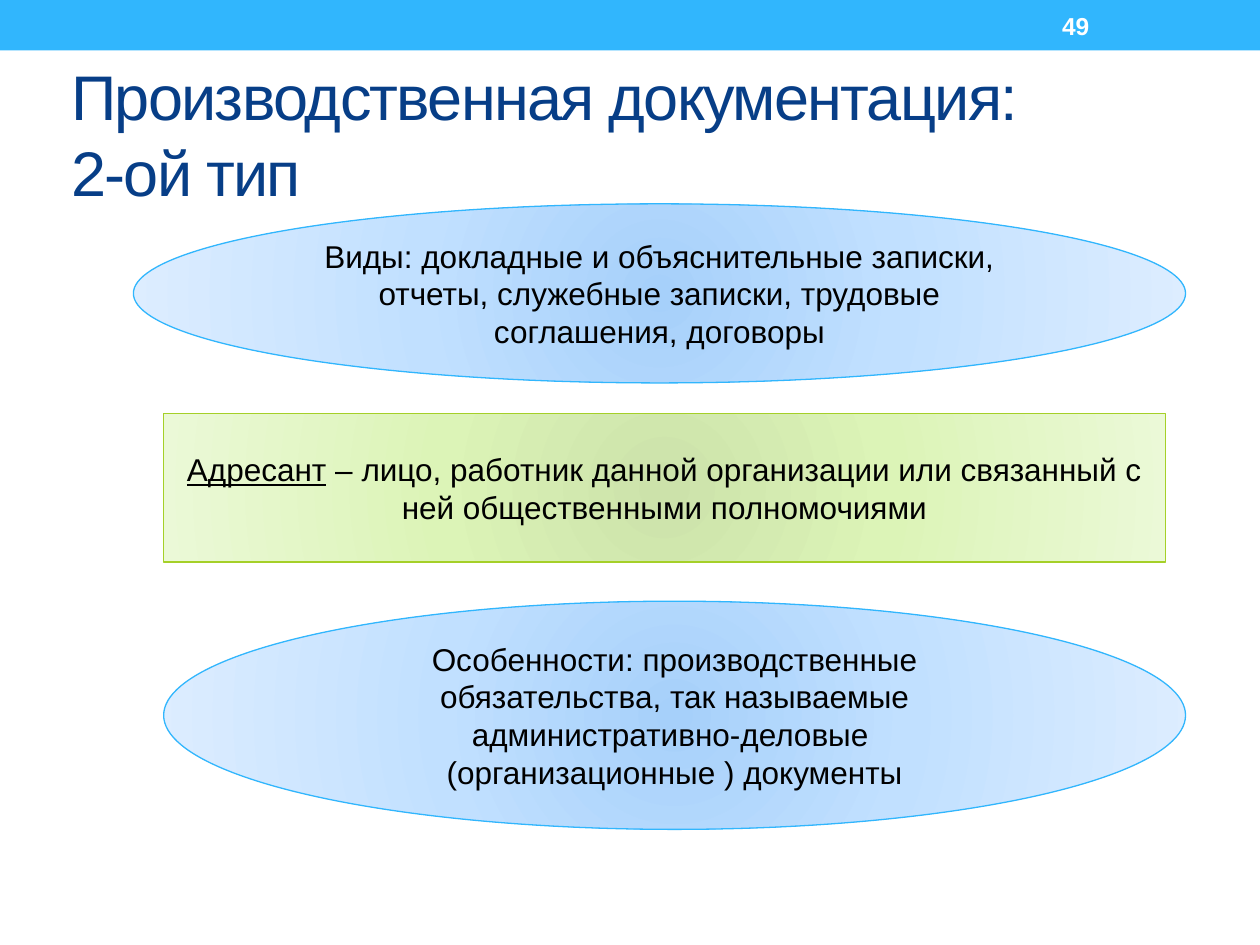
from lxml import etree
from pptx import Presentation
from pptx.dml.color import RGBColor
from pptx.enum.shapes import MSO_SHAPE
from pptx.enum.text import MSO_ANCHOR, PP_ALIGN
from pptx.oxml.ns import qn
from pptx.util import Cm, Pt

RECT, OVAL = MSO_SHAPE.RECTANGLE, MSO_SHAPE.OVAL
MIDDLE, LEFT, CENTER = MSO_ANCHOR.MIDDLE, PP_ALIGN.LEFT, PP_ALIGN.CENTER

FONT = "Arial"
BLACK = RGBColor(0x00, 0x00, 0x00)
WHITE = RGBColor(0xFF, 0xFF, 0xFF)
NAVY = RGBColor(0x07, 0x3E, 0x87)
BLUE = RGBColor(0x31, 0xB6, 0xFD)
GREEN = RGBColor(0xA5, 0xD0, 0x28)
# Gradient colours from the centre outwards
BLUE_GLOW = (RGBColor(0xA6, 0xD0, 0xFA), RGBColor(0xC1, 0xE0, 0xFF), RGBColor(0xDD, 0xED, 0xFF))
GREEN_GLOW = (RGBColor(0xCC, 0xE2, 0xAA), RGBColor(0xDC, 0xF4, 0xB7), RGBColor(0xEB, 0xF9, 0xD7))
GLOW_STOPS = (0, 45, 100)


def add_text(s, runs, size, color, align=LEFT, bold=False):
    """Write one paragraph; runs are (text, underlined) pairs."""
    tf = s.text_frame
    tf.word_wrap = True
    tf.vertical_anchor = MIDDLE
    p = tf.paragraphs[0]
    p.alignment = align
    p.font.name, p.font.size, p.font.bold = FONT, Pt(size), bold
    p.font.color.rgb = color
    for text, underlined in runs:
        r = p.add_run()
        r.text = text
        if underlined:
            r.font.underline = True
    return p


def set_glow(s, colors):
    """Fill a shape with a circular gradient around its centre."""
    grad = etree.Element(qn("a:gradFill"), rotWithShape="1")
    stops = etree.SubElement(grad, qn("a:gsLst"))
    for pos, color in zip(GLOW_STOPS, colors):
        stop = etree.SubElement(stops, qn("a:gs"), pos=str(pos * 1000))
        etree.SubElement(stop, qn("a:srgbClr"), val=str(color))
    circle = etree.SubElement(grad, qn("a:path"), path="circle")
    etree.SubElement(circle, qn("a:fillToRect"), {side: "100000" for side in "ltrb"})
    s.element.spPr.find(qn("a:prstGeom")).addnext(grad)


def add_header(slide, left, top, width, height):
    """Top bar with the slide number near its right end."""
    bar = slide.shapes.add_shape(RECT, left, top, width, height)
    bar.shadow.inherit = False
    bar.fill.solid()
    bar.fill.fore_color.rgb = BLUE
    bar.line.fill.background()
    number = slide.shapes.add_textbox(left + width - Cm(4.24), top + Cm(0.05),
                                      Cm(2.97), height - Cm(0.1))
    add_text(number, [("49", False)], 14, WHITE, bold=True)


def add_title(slide, left, top, width, height):
    s = slide.shapes.add_textbox(left, top, width, height)
    p = add_text(s, [], 36, NAVY)
    for i, line in enumerate(("Производственная документация: ", "2-ой тип")):
        if i:
            p.add_line_break()
        r = p.add_run()
        r.text = line
        r.font.size = Pt(36)
        r.font.element.set("spc", "-100") if hasattr(r.font, "element") else \
            r._r.get_or_add_rPr().set("spc", "-100")


def add_panel(slide, kind, box, glow, outline, runs):
    """Gradient shape with centred text."""
    s = slide.shapes.add_shape(kind, *box)
    s.shadow.inherit = False
    set_glow(s, glow)
    s.line.color.rgb = outline
    s.line.width = Pt(0.75)
    add_text(s, runs, 18, BLACK, CENTER)


def add_panels(slide, left, top):
    """Three stacked panels: kinds, author and features."""
    inset = Cm(0.61)
    panels = (
        (OVAL, (left, top, Cm(21.21), Cm(3.61)), BLUE_GLOW, BLUE,
         [("Виды: докладные и объяснительные записки, отчеты, служебные записки, "
           "трудовые соглашения, договоры", False)]),
        (RECT, (left + inset, top + Cm(4.22), Cm(20.19), Cm(3)), GREEN_GLOW, GREEN,
         [("Адресант", True),
          (" – лицо, работник данной организации или связанный с ней "
           "общественными полномочиями", False)]),
        (OVAL, (left + inset, top + Cm(8.01), Cm(20.6), Cm(4.6)), BLUE_GLOW, BLUE,
         [("Особенности: производственные обязательства, так называемые "
           "административно-деловые  (организационные ) документы", False)]),
    )
    for panel in panels:
        add_panel(slide, *panel)


def main():
    prs = Presentation()
    prs.slide_width, prs.slide_height = Cm(25.4), Cm(19.05)
    slide = prs.slides.add_slide(prs.slide_layouts[6])
    add_header(slide, 0, 0, prs.slide_width, Cm(1.02))
    add_title(slide, Cm(1.19), Cm(1.32), Cm(22.86), Cm(2.74))
    add_panels(slide, Cm(2.69), Cm(4.11))
    prs.save("out.pptx")


if __name__ == "__main__":
    main()
